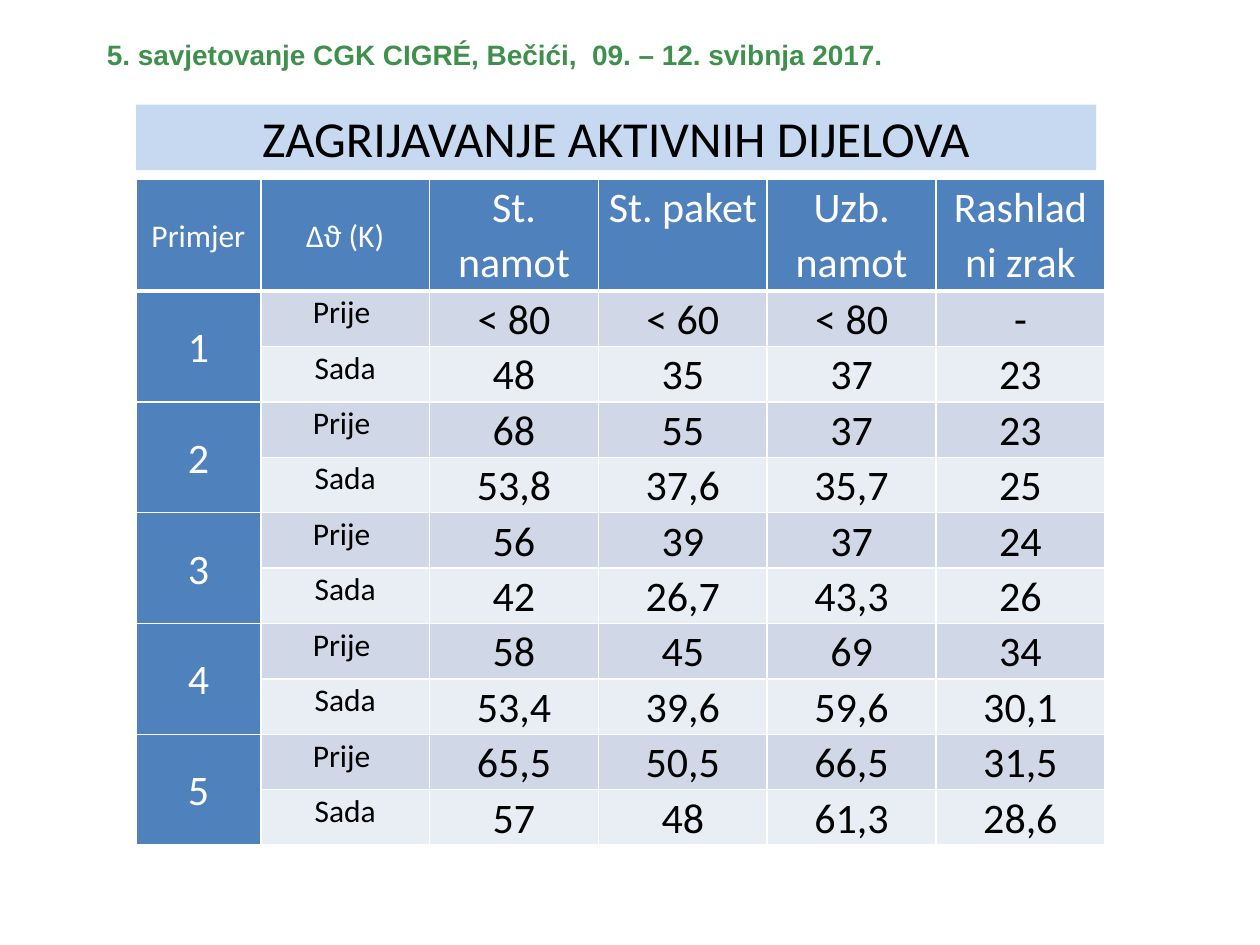
import pptx
import pptx.dml.color
import pptx.enum.shapes
import pptx.enum.text
import pptx.oxml
import pptx.oxml.ns
import pptx.util
from dataclasses import dataclass

Inches = pptx.util.Inches
Pt = pptx.util.Pt
RGB = pptx.dml.color.RGBColor.from_string
ALIGN = pptx.enum.text.PP_ALIGN
ANCHOR = pptx.enum.text.MSO_ANCHOR


@dataclass(frozen=True)
class Theme:
    event_font: str = "Arial"
    font: str = "Calibri"
    white: str = "FFFFFF"
    black: str = "000000"
    green: str = "40904D"
    title_fill: str = "C6D9F1"
    header: str = "4F81BD"
    before: str = "D0D8E8"
    after: str = "E9EDF4"
    event_size: float = 16
    title_size: float = 28.8
    label_size: float = 18
    value_size: float = 24


class Deck:
    """Holds the theme and the current slide and adds styled elements to it."""

    def __init__(self, prs, theme):
        self.theme = theme
        self.s = prs.slides.add_slide(prs.slide_layouts[5])

    def add_text(self, tf, text, size, color, font=None, bold=False, align=ALIGN.CENTER):
        p = tf.paragraphs[0]
        p.alignment = align
        r = p.add_run()
        r.text = text
        r.font.name = font or self.theme.font
        r.font.size = Pt(size)
        r.font.bold = bold
        r.font.color.rgb = RGB(color)
        return p

    def fill(self, target, color):
        target.fill.solid()
        target.fill.fore_color.rgb = RGB(color)

    def event(self, text, left, top, width, height):
        t = self.theme
        sp = self.s.shapes.add_shape(
            pptx.enum.shapes.MSO_SHAPE.RECTANGLE,
            Inches(left), Inches(top), Inches(width), Inches(height))
        sp.shadow.inherit = False
        sp.line.fill.background()
        self.fill(sp, t.white)
        tf = sp.text_frame
        tf.word_wrap = True
        tf.vertical_anchor = ANCHOR.TOP
        self.add_text(tf, text, t.event_size, t.green, t.event_font, True, ALIGN.LEFT)

    def title(self, text, left, top, width, height):
        t = self.theme
        sp = self.s.shapes.title
        sp.left, sp.top = Inches(left), Inches(top)
        sp.width, sp.height = Inches(width), Inches(height)
        self.fill(sp, t.title_fill)
        tf = sp.text_frame
        tf.auto_size = pptx.enum.text.MSO_AUTO_SIZE.NONE
        tf.vertical_anchor = ANCHOR.MIDDLE
        self.add_text(tf, text, t.title_size, t.black)

    def borders(self, cell, bottom):
        tc_pr = cell._tc.get_or_add_tcPr()
        for side, width in (("L", 1), ("R", 1), ("T", 1), ("B", bottom)):
            tc_pr.append(pptx.oxml.parse_xml(
                f'<a:ln{side} {pptx.oxml.ns.nsdecls("a")} w="{Pt(width)}">'
                f'<a:solidFill><a:srgbClr val="{self.theme.white}"/></a:solidFill>'
                f'</a:ln{side}>'))

    def cell(self, cell, text, size, color, fill, middle=False, bottom=1):
        cell.margin_left = cell.margin_right = Inches(0.07)
        cell.margin_top = cell.margin_bottom = 0
        cell.vertical_anchor = ANCHOR.MIDDLE if middle else ANCHOR.TOP
        self.borders(cell, bottom)
        self.fill(cell, fill)
        if text:
            self.add_text(cell.text_frame, text, size, color).line_spacing = 1.07

    def table(self, headers, examples, left, top, widths, heights):
        t = self.theme
        table = self.s.shapes.add_table(
            len(heights), len(widths), Inches(left), Inches(top),
            Inches(sum(widths)), Inches(sum(heights))).table
        table.horz_banding = False
        for column, width in zip(table.columns, widths):
            column.width = Inches(width)
        for row, height in zip(table.rows, heights):
            row.height = Inches(height)
        for c, text in enumerate(headers):
            label = c < 2
            self.cell(table.cell(0, c), text, t.label_size if label else t.value_size,
                      t.white, t.header, middle=label, bottom=3)
        for i, example in enumerate(examples):
            first = 1 + 2 * i
            states = zip(("Prije ", "Sada"), (t.before, t.after), example)
            for r, (state, fill, values) in enumerate(states, first):
                number = str(i + 1) if r == first else ""
                self.cell(table.cell(r, 0), number, t.value_size, t.white, t.header, middle=True)
                self.cell(table.cell(r, 1), state, t.label_size, t.black, fill)
                for c, value in enumerate(values, 2):
                    self.cell(table.cell(r, c), value, t.value_size, t.black, fill)
            table.cell(first, 0).merge(table.cell(first + 1, 0))


HEADERS = ("Primjer", "Δϑ (K)", "St. namot", "St. paket", "Uzb. namot", "Rashladni zrak")
EXAMPLES = (
    (("< 80", "< 60", "< 80", "-"), ("48", "35", "37", "23")),
    (("68", "55", "37", "23"), ("53,8", "37,6", "35,7", "25")),
    (("56", "39", "37", "24"), ("42", "26,7", "43,3", "26")),
    (("58", "45", "69", "34"), ("53,4", "39,6", "59,6", "30,1")),
    (("65,5", "50,5", "66,5", "31,5"), ("57", "48", "61,3", "28,6")),
)


def main():
    prs = pptx.Presentation()
    prs.slide_width, prs.slide_height = Inches(10), Inches(7.5)
    deck = Deck(prs, Theme())
    deck.event("5. savjetovanje CGK CIGRÉ, Bečići,  09. – 12. svibnja 2017.",
               0.75, 0.25, 7.42, 0.37)
    deck.title("ZAGRIJAVANJE AKTIVNIH DIJELOVA", 1.08, 0.83, 7.62, 0.52)
    deck.table(HEADERS, EXAMPLES, 1.08, 1.42,
               widths=[0.99] + [1.34] * 5, heights=[0.89] + [0.44] * 10)
    prs.save("out.pptx")


if __name__ == "__main__":
    main()
